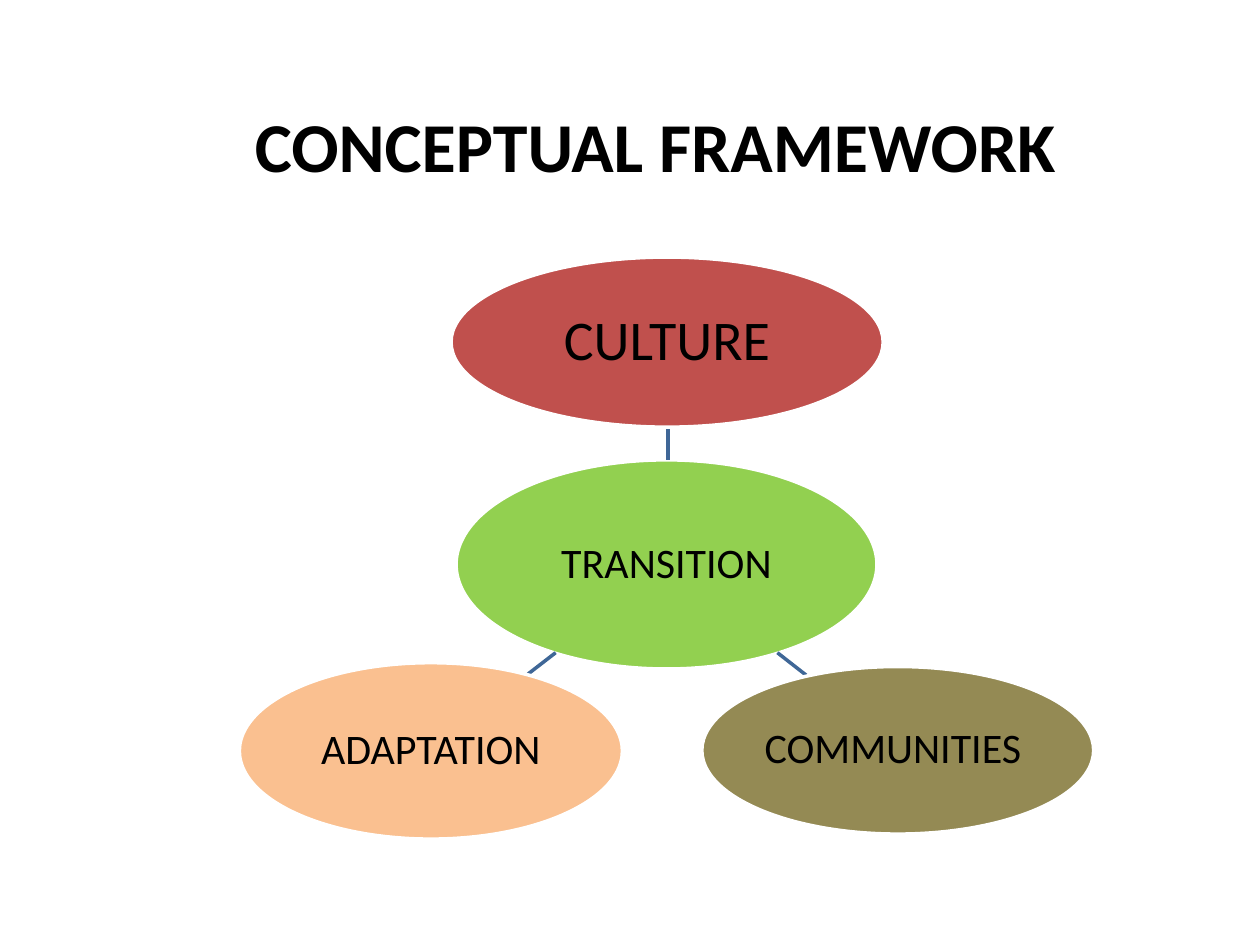
from lxml import etree
from pptx import Presentation
from pptx.dml.color import RGBColor
from pptx.enum import shapes, text
from pptx.oxml import ns
from pptx.util import Inches, Pt

COLORS = {
    "text": "000000", "outline": "FFFFFF", "link": "3F6797",
    "transition": "92D050", "culture": "C0504D",
    "communities": "948A54", "adaptation": "FAC090",
}


def color(name):
    return RGBColor.from_string(COLORS[name])


def write(frame, wording, size, bold=False):
    """Put one centred line of text in a frame."""
    frame.word_wrap = True
    frame.vertical_anchor = text.MSO_ANCHOR.MIDDLE
    para = frame.paragraphs[0]
    para.alignment = text.PP_ALIGN.CENTER
    span = para.add_run()
    span.text = wording
    for key, value in {"name": "Calibri", "size": Pt(size), "bold": bold}.items():
        setattr(span.font, key, value)
    span.font.color.rgb = color("text")


deck = Presentation()
deck.slide_width, deck.slide_height = Inches(10), Inches(7.5)
page = deck.slides.add_slide(deck.slide_layouts[5])

title = page.shapes.title
title.left, title.top = Inches(1.54), Inches(0.76)
title.width, title.height = Inches(7.32), Inches(0.77)
write(title.text_frame, "CONCEPTUAL FRAMEWORK", 40, bold=True)

# Fill, wording, text size, ellipse box, link from the centre (x1, y1, x2, y2)
nodes = [
    ("transition", "TRANSITION", 24, (3.62, 3.65, 3.34, 1.66), None),
    ("culture", "CULTURE", 32, (3.58, 2.04, 3.43, 1.35), (5.3, 3.65, 5.3, 3.39)),
    ("communities", "COMMUNITIES ", 24, (5.57, 5.29, 3.11, 1.33), (6.17, 5.18, 6.4, 5.36)),
    ("adaptation", "ADAPTATION", 24, (1.9, 5.26, 3.04, 1.4), (4.41, 5.18, 4.19, 5.35)),
]
for fill, wording, size, place, ends in nodes:
    if ends:
        link = page.shapes.add_connector(
            shapes.MSO_CONNECTOR.STRAIGHT, *[Inches(end) for end in ends])
        link.line.color.rgb = color("link")
        link.line.width = Pt(2)
        etree.SubElement(link._element.spPr, ns.qn("a:effectLst"))

    node = page.shapes.add_shape(
        shapes.MSO_SHAPE.OVAL, *[Inches(length) for length in place])
    node.shadow.inherit = False
    node.fill.solid()
    node.fill.fore_color.rgb = color(fill)
    node.line.color.rgb = color("outline")
    node.line.width = Pt(2)
    frame = node.text_frame
    for side in ("left", "top", "right", "bottom"):
        setattr(frame, f"margin_{side}", Inches(0.02))
    write(frame, wording, size)
    frame.paragraphs[0].line_spacing = 0.9

deck.save("out.pptx")
